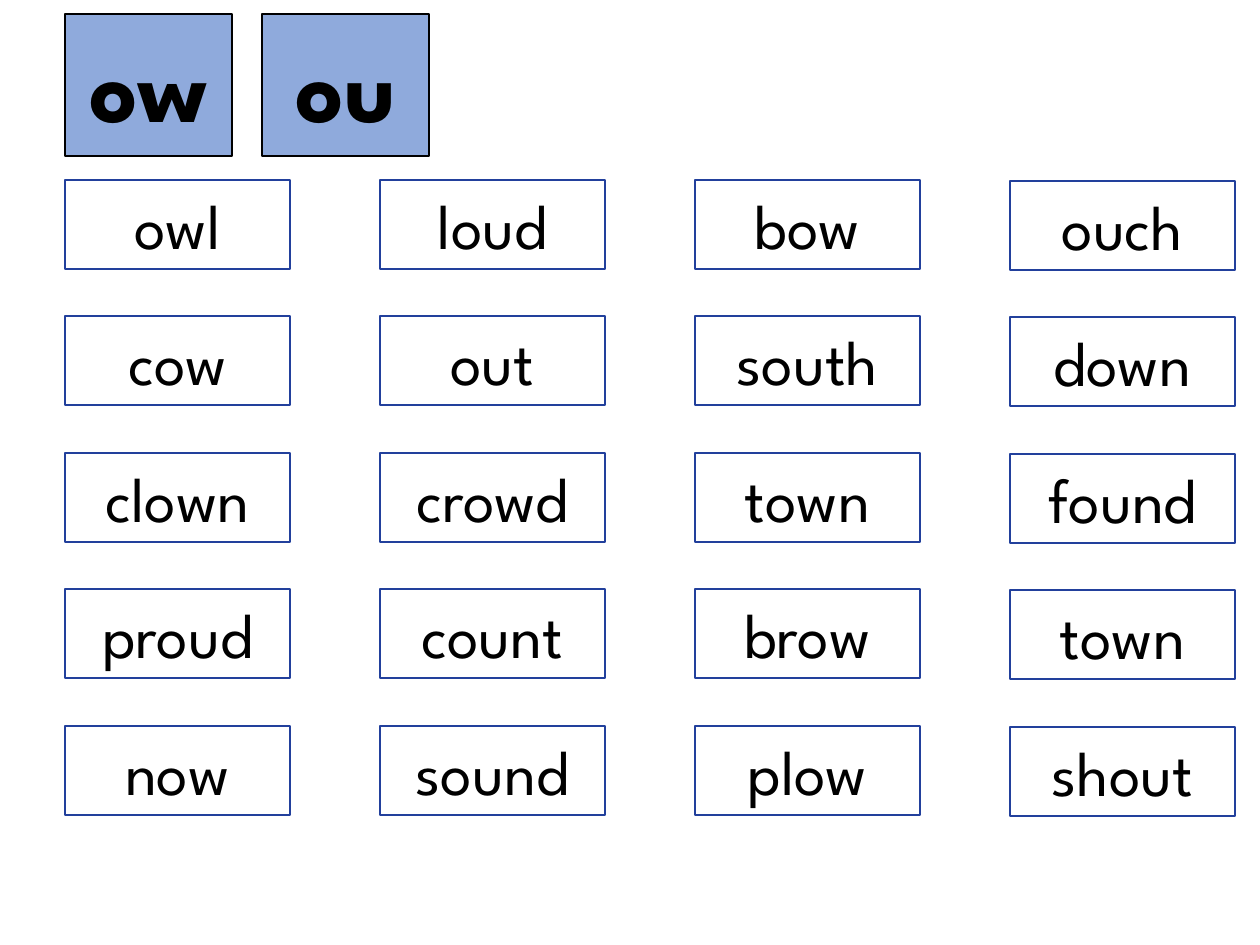
import pptx
import pptx.util
import pptx.dml.color
import pptx.enum.shapes
import pptx.enum.text

PX = 914400 / 126
LEFT = 65
COLUMN_STEP = 315
WORD_COLUMNS = [
    (180, ["owl", "cow", "clown", "proud", "now"]),
    (180, ["loud", "out", "crowd", "count", "sound"]),
    (180, ["bow", "south", "town", "brow", "plow"]),
    (181, ["ouch", "down", "found", "town", "shout"]),
]


def px(n):
    return round(n * PX)


def color(value):
    return pptx.dml.color.RGBColor.from_string(value)


def set_all(target, values):
    for name, value in values.items():
        setattr(target, name, value)


def add_card(s, text, box, line, width, font, frame):
    sp = s.shapes.add_shape(pptx.enum.shapes.MSO_SHAPE.RECTANGLE, *map(px, box))
    sp.shadow.inherit = False
    sp.fill.background()
    sp.line.color.rgb = color(line)
    sp.line.width = pptx.util.Pt(width)
    tf = sp.text_frame
    set_all(tf, {"word_wrap": True, **frame})
    p = tf.paragraphs[0]
    p.alignment = pptx.enum.text.PP_ALIGN.CENTER
    r = p.add_run()
    r.text = text
    set_all(r.font, {"name": "League Spartan", **font})
    r.font.color.rgb = color("000000")
    return sp


def add_heading(s, text, x):
    font = {"size": pptx.util.Pt(54), "bold": True}
    frame = {"vertical_anchor": pptx.enum.text.MSO_ANCHOR.MIDDLE}
    sp = add_card(s, text, (x, 14, 167, 142), "000000", 1, font, frame)
    sp.fill.solid()
    sp.fill.fore_color.rgb = color("8FAADC")


def add_word(s, text, x, y):
    font = {"size": pptx.util.Pt(36)}
    frame = {
        "vertical_anchor": pptx.enum.text.MSO_ANCHOR.TOP,
        "auto_size": pptx.enum.text.MSO_AUTO_SIZE.SHAPE_TO_FIT_TEXT,
    }
    add_card(s, text, (x, y, 225, 89), "22409C", 0.75, font, frame)


def main():
    prs = pptx.Presentation()
    set_all(prs, {"slide_width": px(1260), "slide_height": px(945)})
    s = prs.slides.add_slide(prs.slide_layouts[6])
    for column, (top, words) in enumerate(WORD_COLUMNS):
        for row, word in enumerate(words):
            add_word(s, word, LEFT + column * COLUMN_STEP, top + row * 273 // 2)
    for i, text in enumerate(["ow", "ou"]):
        add_heading(s, text, LEFT + i * 197)
    prs.save("out.pptx")


if __name__ == "__main__":
    main()
